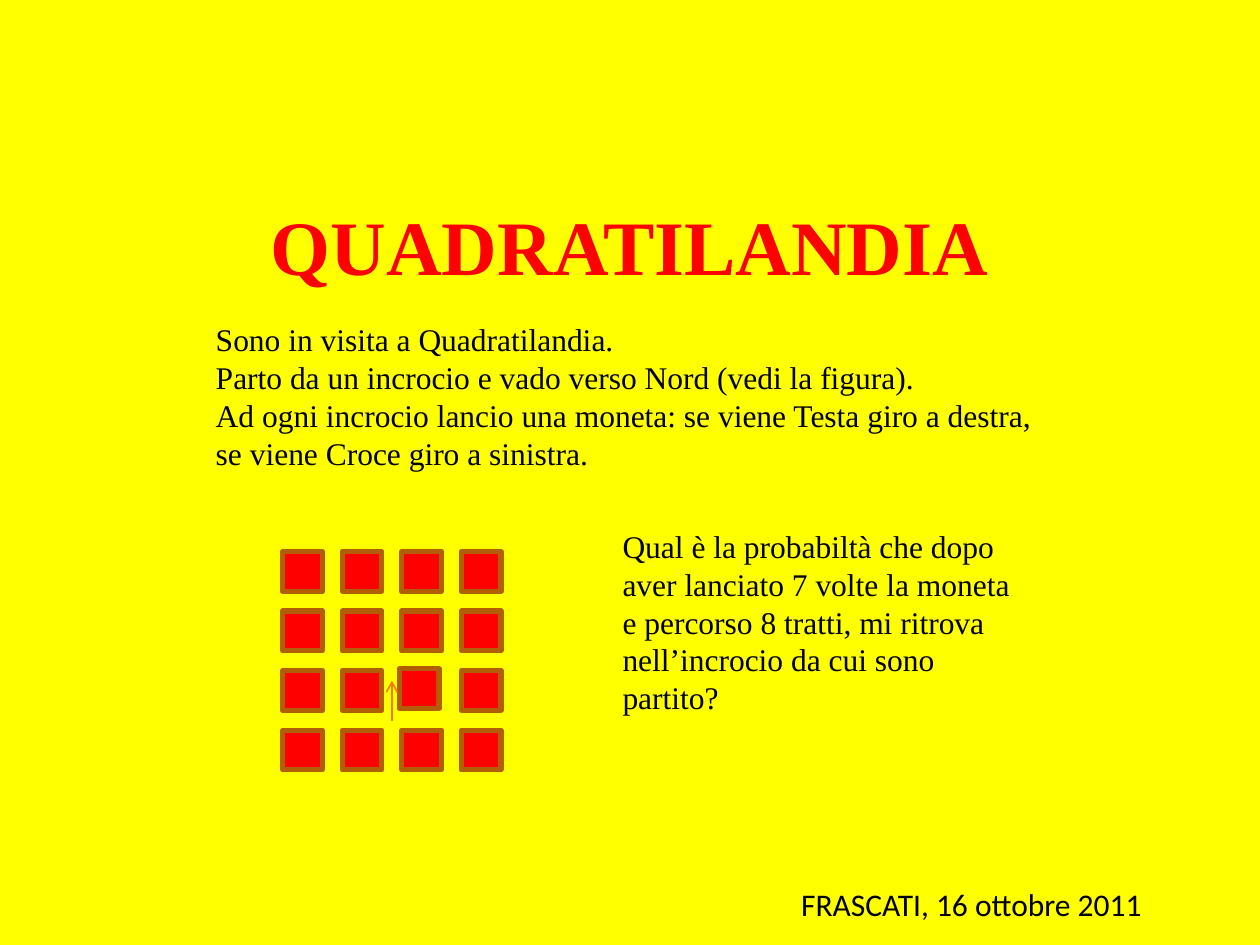
"""Build the Quadratilandia puzzle slide."""
from dataclasses import dataclass
from itertools import product

from lxml.etree import SubElement
from pptx import Presentation
from pptx.dml.color import RGBColor
from pptx.enum.shapes import MSO_CONNECTOR as Connector, MSO_SHAPE as Shape
from pptx.enum.text import MSO_ANCHOR as Anchor, MSO_AUTO_SIZE as AutoSize, PP_ALIGN as Align
from pptx.oxml.ns import qn
from pptx.util import Cm, Pt


@dataclass(frozen=True)
class Theme:
    background: str = "FFFF00"
    accent: str = "FF0000"
    border: str = "B25E07"
    arrow: str = "F07F09"
    ink: str = "000000"
    serif: str = "Times New Roman"
    sans: str = "Calibri"
    title_size: int = 44
    text_size: int = 18
    border_width: int = 3
    arrow_width: int = 1


THEME = Theme()
TITLE = "QUADRATILANDIA"
TITLE_AREA = (1.9, 3.53, 21.6, 2.8)
TEXTS = [
    ((4.1, 6.33, 17, 3.33), THEME.serif, [
        "Sono in visita a Quadratilandia.",
        "Parto da un incrocio e vado verso Nord (vedi la figura).",
        "Ad ogni incrocio lancio una moneta: se viene Testa giro a destra, "
        "se viene Croce giro a sinistra.",
    ]),
    ((12.3, 10.5, 8.6, 4.1), THEME.serif, [
        "Qual è la probabiltà che dopo aver lanciato 7 volte la moneta "
        "e percorso 8 tratti, mi ritrova nell’incrocio da cui sono partito?",
    ]),
    ((15.9, 17.72, 7.8, 1.03), THEME.sans, ["FRASCATI, 16 ottobre 2011"]),
]
GRID_COUNT = 4
GRID_LEFT, GRID_TOP = 5.7, 11.12
BLOCK_SIZE, BLOCK_PITCH = 0.8, 1.2
BLOCK_SHIFTS = {(2, 2): (-0.05, -0.04)}
ARROW = (7.9, 14.53, 7.9, 13.72)


def color(value):
    return RGBColor.from_string(value)


def lengths(values):
    return [Cm(value) for value in values]


def write(para, text, font, size, ink, bold=False):
    span = para.add_run()
    span.text = text
    span.font.name = font
    span.font.size = Pt(size)
    span.font.bold = bold
    span.font.color.rgb = color(ink)


def add_title(page):
    title = page.shapes.title
    title.left, title.top, title.width, title.height = lengths(TITLE_AREA)
    title.text_frame.vertical_anchor = Anchor.MIDDLE
    para = title.text_frame.paragraphs[0]
    para.alignment = Align.CENTER
    write(para, TITLE, THEME.serif, THEME.title_size, THEME.accent, bold=True)


def add_text(page, area, font, lines):
    frame = page.shapes.add_textbox(*lengths(area)).text_frame
    frame.word_wrap = True
    frame.auto_size = AutoSize.SHAPE_TO_FIT_TEXT
    for index, line in enumerate(lines):
        para = frame.add_paragraph() if index else frame.paragraphs[0]
        write(para, line, font, THEME.text_size, THEME.ink)


def add_block(page, row, column):
    shift_x, shift_y = BLOCK_SHIFTS.get((row, column), (0, 0))
    left = GRID_LEFT + column * BLOCK_PITCH + shift_x
    top = GRID_TOP + row * BLOCK_PITCH + shift_y
    block = page.shapes.add_shape(
        Shape.RECTANGLE, *lengths((left, top, BLOCK_SIZE, BLOCK_SIZE)))
    block.shadow.inherit = False
    block.fill.solid()
    block.fill.fore_color.rgb = color(THEME.accent)
    block.line.color.rgb = color(THEME.border)
    block.line.width = Pt(THEME.border_width)


def add_arrow(page):
    arrow = page.shapes.add_connector(Connector.STRAIGHT, *lengths(ARROW))
    arrow.line.color.rgb = color(THEME.arrow)
    arrow.line.width = Pt(THEME.arrow_width)
    SubElement(arrow.line._get_or_add_ln(), qn("a:tailEnd"), type="arrow")
    SubElement(arrow._element.spPr, qn("a:effectLst"))


def main():
    deck = Presentation()
    deck.slide_width, deck.slide_height = lengths((25.4, 19.05))
    page = deck.slides.add_slide(deck.slide_layouts[0])
    page.background.fill.solid()
    page.background.fill.fore_color.rgb = color(THEME.background)
    subtitle = page.placeholders[1].element
    subtitle.getparent().remove(subtitle)

    add_title(page)
    for area, font, lines in TEXTS:
        add_text(page, area, font, lines)
    for row, column in product(range(GRID_COUNT), repeat=2):
        add_block(page, row, column)
    add_arrow(page)
    deck.save("out.pptx")


if __name__ == "__main__":
    main()
